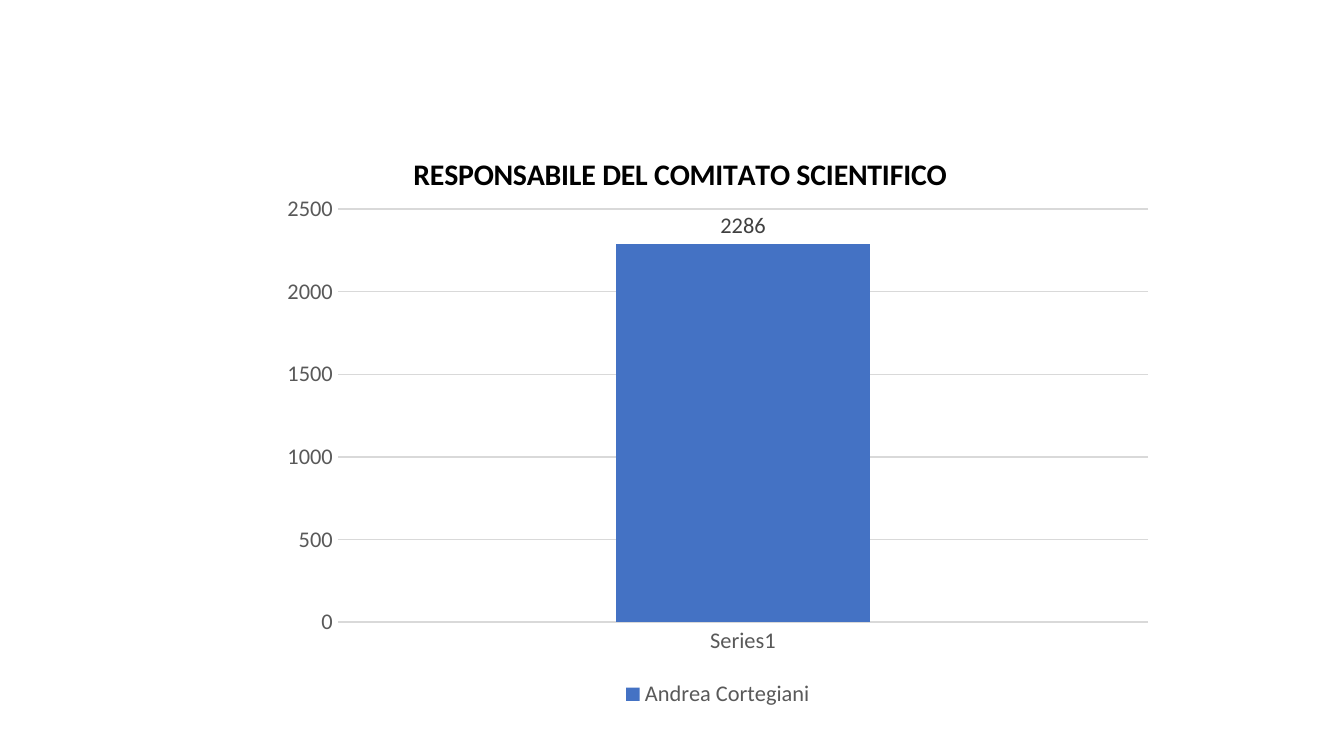
from lxml import etree
from pptx import Presentation
from pptx.chart.data import CategoryChartData
from pptx.dml.color import RGBColor
from pptx.enum.chart import XL_CHART_TYPE, XL_LABEL_POSITION, XL_LEGEND_POSITION, XL_TICK_MARK
from pptx.oxml.ns import qn
from pptx.util import Pt

COLUMNS = XL_CHART_TYPE.COLUMN_CLUSTERED
OUTSIDE = XL_LABEL_POSITION.OUTSIDE_END
BOTTOM = XL_LEGEND_POSITION.BOTTOM
NO_TICK = XL_TICK_MARK.NONE
PX = 914400 / 134.4
LEFT, TOP, WIDTH, HEIGHT = 270, 116, 896, 597
GREY, RULE = "595959", "D9D9D9"


def set_font(font, size, color, bold=False):
    font.name = "Calibri"
    font.size = Pt(size)
    font.bold = bold
    font.color.rgb = RGBColor.from_string(color)


def make_layout(**settings):
    """Return a manual chart layout; positions are fractions of the chart."""
    layout = etree.Element(qn("c:layout"))
    manual = etree.SubElement(layout, qn("c:manualLayout"))
    for name, value in settings.items():
        etree.SubElement(manual, qn(f"c:{name}")).set("val", str(value))
    return layout


deck = Presentation()
deck.slide_width = round(1344 * PX)
deck.slide_height = round(756 * PX)
page = deck.slides.add_slide(deck.slide_layouts[6])

data = CategoryChartData()
data.categories = ["Series1"]
data.add_series("Andrea Cortegiani", [2286])
frame = page.shapes.add_chart(COLUMNS, *(round(n * PX) for n in (LEFT, TOP, WIDTH, HEIGHT)), data)
chart = frame.chart
set_font(chart.font, 10, "000000")

# Title
title = chart.chart_title
para = title.text_frame.paragraphs[0]
span = para.add_run()
span.text = "RESPONSABILE DEL COMITATO SCIENTIFICO"
set_font(span.font, 16, "000000", bold=True)
title.include_in_layout = False
for old in title._element.findall(qn("c:layout")):
    title._element.remove(old)
title._element.find(qn("c:tx")).addnext(
    make_layout(xMode="edge", yMode="edge",
                x=round((408 - LEFT) / WIDTH, 3), y=round((149 - TOP) / HEIGHT, 3)))

# Plot area
plot_area = chart._chartSpace.chart.plotArea
for old in plot_area.findall(qn("c:layout")):
    plot_area.remove(old)
plot_area.insert(0, make_layout(
    layoutTarget="inner", xMode="edge", yMode="edge",
    x=round((338 - LEFT) / WIDTH, 3), y=round((209 - TOP) / HEIGHT, 3),
    w=round(810 / WIDTH, 3), h=round(413 / HEIGHT, 3)))

# Axes
for axis in (chart.category_axis, chart.value_axis):
    axis.major_tick_mark = axis.minor_tick_mark = NO_TICK
    set_font(axis.tick_labels.font, 12, GREY)
chart.value_axis.minimum_scale = 0
chart.value_axis.maximum_scale = 2500
chart.value_axis.major_unit = 500
chart.value_axis.has_major_gridlines = True
chart.value_axis.format.line.fill.background()
for line in (chart.category_axis.format.line, chart.value_axis.major_gridlines.format.line):
    line.color.rgb = RGBColor.from_string(RULE)
    line.width = Pt(0.75)

# Column and its label
plot = chart.plots[0]
plot.gap_width = 219
plot.overlap = -27
plot.vary_by_categories = False
column = plot.series[0]
column.format.fill.solid()
column.format.fill.fore_color.rgb = RGBColor.from_string("4472C4")
labels = column.data_labels
labels.show_value = True
labels.position = OUTSIDE
set_font(labels.font, 12, "404040")

chart.has_legend = True
chart.legend.position = BOTTOM
chart.legend.include_in_layout = False
set_font(chart.legend.font, 12, GREY)

deck.save("out.pptx")
